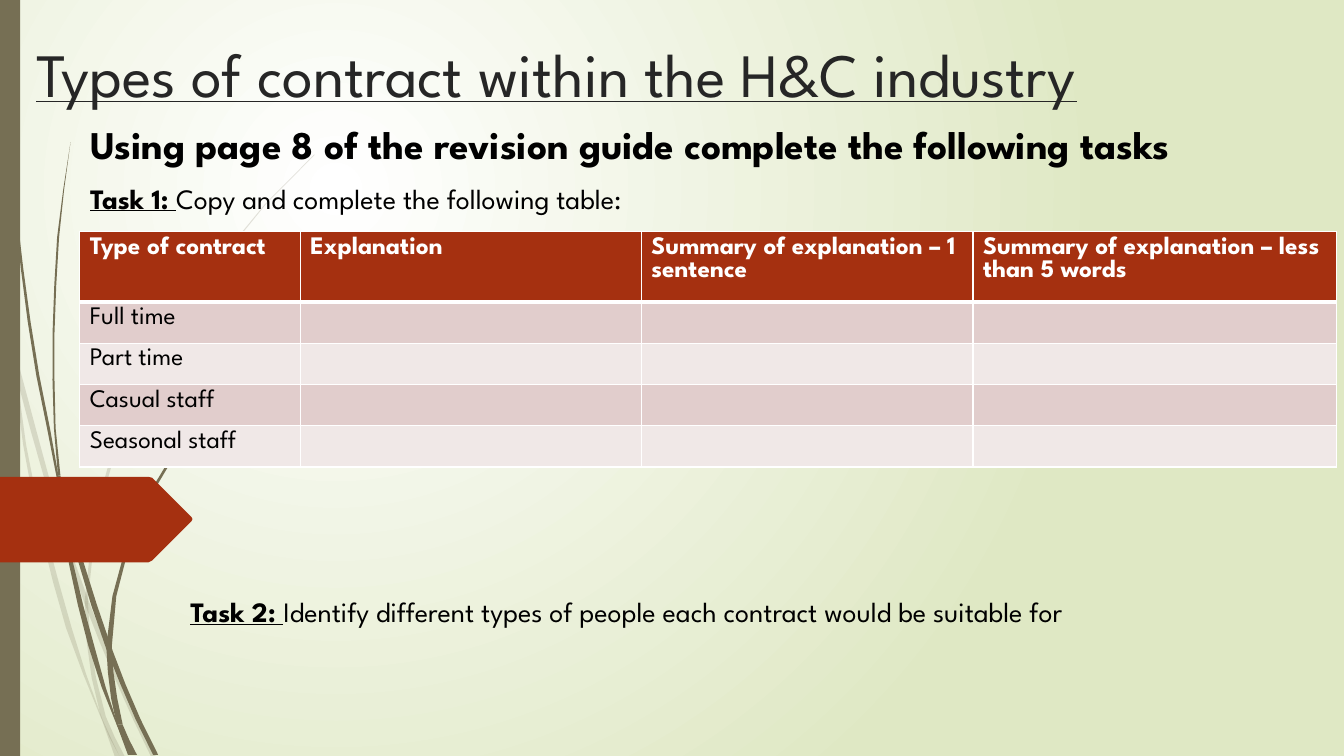
from dataclasses import dataclass
from typing import NamedTuple

from lxml.etree import SubElement
from pptx import Presentation
from pptx.dml.color import RGBColor as Rgb
from pptx.enum.shapes import MSO_SHAPE as Kind
from pptx.enum.text import MSO_ANCHOR as Anchor
from pptx.oxml.ns import qn
from pptx.shapes.autoshape import Shape
from pptx.slide import Slide
from pptx.table import _Cell as Cell
from pptx.text.text import Font
from pptx.util import Cm, Pt


@dataclass(frozen=True)
class Theme:
    face: str = "League Spartan"
    white: str = "FFFFFF"
    black: str = "000000"
    ink: str = "262626"
    lime: str = "DFE8C4"
    bark: str = "766F54"
    rust: str = "A53010"
    bands: tuple[str, str] = ("E1CDCC", "F0E8E7")
    title: int = 44
    lead: int = 28
    task: int = 20
    grid: int = 18
    gap: int = 10


class Box(NamedTuple):
    left: float
    top: float
    width: float
    height: float


class Knot(NamedTuple):
    x: float
    y: float


Edge = list[tuple[float, float]]


class Stem(NamedTuple):
    """A tapered blade between two edges, cut at heights; all in 1/100 inch."""
    cuts: list[int]
    left: Edge
    right: Edge
    alpha: int = 100


class Task(NamedTuple):
    label: str
    text: str


THEME = Theme()
STEMS = [
    Stem([282, 350, 714, 751],
         [(0, 299), (10, 344), (28, 470), (65, 621), (101, 714), (114, 751)],
         [(0, 282), (9, 322), (17, 376), (31, 469), (70, 619), (99, 707), (119, 751)], 20),
    Stem([345, 599, 751],
         [(14, 345), (17, 376), (58, 522), (84, 599), (123, 694), (150, 751)],
         [(14, 345), (62, 520), (92, 607), (127, 692), (155, 751)], 20),
    Stem([153, 596, 711, 751],
         [(312, 153), (268, 197), (228, 244), (158, 348), (107, 461), (85, 584),
          (87, 646), (101, 714), (119, 751)],
         [(312, 154), (268, 198), (229, 245), (160, 349), (110, 462), (88, 584),
          (91, 646), (105, 711), (124, 751)], 20),
    Stem([0, 479, 722, 749],
         [(3, 0), (7, 110), (17, 233), (33, 355), (57, 477), (68, 557), (93, 659),
          (117, 722), (127, 749)],
         [(4, 0), (8, 109), (19, 232), (36, 355), (55, 453), (72, 556), (98, 657),
          (116, 717), (131, 749)]),
    Stem([141, 472, 643, 749],
         [(70, 141), (62, 193), (56, 245), (52, 349), (55, 449), (64, 505), (88, 592),
          (106, 645), (132, 708), (152, 749)],
         [(70, 141), (63, 193), (58, 245), (54, 349), (60, 472), (93, 590), (113, 649),
          (136, 706), (157, 749)]),
    Stem([344, 641, 719, 749],
         [(260, 344), (231, 373), (204, 405), (156, 474), (122, 551), (106, 631),
          (110, 691), (117, 722), (130, 749)],
         [(261, 344), (231, 374), (205, 406), (158, 476), (125, 552), (111, 633),
          (121, 716), (136, 749)]),
]
TAG = [(0, 473), (147, 473), (151, 474), (190, 513), (191, 515), (190, 517),
       (151, 556), (147, 558), (0, 558)]
COLS = [5.56, 8.59, 8.36, 9.17]
ROWS = [0] + [1.04] * 4
HEADS = ["Type of contract", "Explanation", "Summary of explanation – 1 sentence",
         "Summary of explanation – less than 5 words"]
TYPES = ["Full time", "Part time", "Casual staff", "Seasonal staff"]


def place(box: Box) -> list[Cm]:
    return [Cm(size) for size in box]


def paint(shape: Shape, tint: str) -> None:
    shape.shadow.inherit = False
    shape.fill.solid()
    shape.fill.fore_color.rgb = Rgb.from_string(tint)
    shape.line.fill.background()


def style(font: Font, size: int, tint: str, bold: bool = False) -> None:
    font.name, font.size, font.bold = THEME.face, Pt(size), bold
    font.color.rgb = Rgb.from_string(tint)


def trace(edge: Edge, y: float) -> Knot:
    """The point at height y on a cubic Hermite curve through the edge."""
    pts = [Knot(*pair) for pair in edge]
    last = len(pts) - 1
    y = min(max(y, pts[0].y), pts[last].y)
    i = next(k for k in range(last) if y <= pts[k + 1].y)

    def slope(k: int) -> float:
        a, b = pts[max(k - 1, 0)], pts[min(k + 1, last)]
        return (b.x - a.x) / (b.y - a.y)

    a, b = pts[i], pts[i + 1]
    t = (y - a.y) / (b.y - a.y)
    ease = t * t * (3 - 2 * t)
    bend = (b.y - a.y) * t * (1 - t) * (slope(i) * (1 - t) - slope(i + 1) * t)
    return Knot(a.x + (b.x - a.x) * ease + bend, y)


def outline(slide: Slide, rim: Edge, tint: str) -> Shape:
    """A filled shape around points in 1/100 inch."""
    fine = [(10 * x, 10 * y) for x, y in rim]
    pen = slide.shapes.build_freeform(*fine[0], scale=Cm(2.54) / 1000)
    pen.add_line_segments(fine[1:], close=True)
    shape = pen.convert_to_shape()
    paint(shape, tint)
    return shape


def draw_stem(slide: Slide, stem: Stem) -> None:
    for top, end in zip(stem.cuts, stem.cuts[1:]):
        steps = 2 + (end - top) // 60
        marks = [top + (end - top) * k / steps for k in range(steps + 1)]
        rim = [trace(stem.left, y) for y in marks]
        rim += [trace(stem.right, y) for y in reversed(marks)]
        blade = outline(slide, rim, THEME.bark)
        if stem.alpha < 100:
            tint = blade.element.spPr.find(f"{qn('a:solidFill')}/{qn('a:srgbClr')}")
            SubElement(tint, qn("a:alpha"), val=str(stem.alpha * 1000))


def draw_back(slide: Slide) -> None:
    fill = slide.background.fill
    fill.gradient()
    for stop, tint in zip(fill.gradient_stops, (THEME.white, THEME.lime)):
        stop.color.rgb = Rgb.from_string(tint)
    grad = slide.element.find(f".//{qn('a:gradFill')}")
    grad.remove(grad.find(qn("a:lin")))
    ring = SubElement(grad, qn("a:path"), path="circle")
    SubElement(ring, qn("a:fillToRect"), l="50000", t="50000", r="100000", b="100000")


def add_text(slide: Slide, box: Box, lines: list[str | Task], size: int,
             tint: str = THEME.black, bold: bool = False) -> Shape:
    """Plain lines take the given style; a task has a bold, underlined label."""
    shape = slide.shapes.add_textbox(*place(box))
    frame = shape.text_frame
    frame.word_wrap = True
    for i, line in enumerate(lines):
        para = frame.add_paragraph() if i else frame.paragraphs[0]
        para.space_before = Pt(THEME.gap)
        if isinstance(line, Task):
            style(para.font, THEME.task, THEME.black)
            label, text = para.add_run(), para.add_run()
            label.text, text.text = line
            label.font.bold = label.font.underline = True
        else:
            style(para.font, size, tint, bold)
            para.add_run().text = line
    return shape


def rule(cell: Cell, row: int) -> None:
    """White borders, thick between the head row and the first body row."""
    thick = {0: "lnB", 1: "lnT"}.get(row)
    props = cell._tc.get_or_add_tcPr()
    for i, side in enumerate(("lnL", "lnR", "lnT", "lnB")):
        line = SubElement(props, qn(f"a:{side}"), w=str(Pt(3 if side == thick else 1)))
        SubElement(SubElement(line, qn("a:solidFill")), qn("a:srgbClr"), val=THEME.white)
        props.insert(i, line)


def draw_grid(slide: Slide) -> None:
    box = Box(2.01, 5.83, sum(COLS), 5.57)
    grid = slide.shapes.add_table(len(ROWS), len(COLS), *place(box)).table
    for col, width in zip(grid.columns, COLS):
        col.width = Cm(width)
    texts = [HEADS] + [[name] + [""] * (len(COLS) - 1) for name in TYPES]
    for r, (row, height) in enumerate(zip(grid.rows, ROWS)):
        row.height = Cm(height)
        head = r == 0
        for cell, text in zip(row.cells, texts[r]):
            cell.text = text
            style(cell.text_frame.paragraphs[0].font, THEME.grid,
                  THEME.white if head else THEME.black, head)
            cell.fill.solid()
            tint = THEME.rust if head else THEME.bands[(r - 1) % 2]
            cell.fill.fore_color.rgb = Rgb.from_string(tint)
            rule(cell, r)


def main() -> None:
    deck = Presentation()
    deck.slide_width, deck.slide_height = Cm(33.87), Cm(19.05)
    slide = deck.slides.add_slide(deck.slide_layouts[6])
    draw_back(slide)
    for stem in STEMS:
        draw_stem(slide, stem)
    bar = slide.shapes.add_shape(Kind.RECTANGLE, *place(Box(0, 0, 0.51, 19.05)))
    paint(bar, THEME.bark)
    outline(slide, TAG, THEME.rust)

    title = add_text(slide, Box(0.66, 0.56, 33.02, 2.34),
                     ["Types of contract within the H&C industry"], THEME.title, THEME.ink)
    title.text_frame.vertical_anchor = Anchor.BOTTOM
    head = title.text_frame.paragraphs[0]
    head.space_before, head.font.underline = Pt(0), True
    add_text(slide, Box(2.02, 2.9, 31.67, 9.63),
             ["Using page 8 of the revision guide complete the following tasks",
              Task("Task 1: ", "Copy and complete the following table:")],
             THEME.lead, bold=True)
    draw_grid(slide)
    add_text(slide, Box(4.55, 14.86, 29.16, 1.4),
             [Task("Task 2: ", "Identify different types of people each contract "
                   "would be suitable for")], THEME.task)
    deck.save("out.pptx")


if __name__ == "__main__":
    main()
